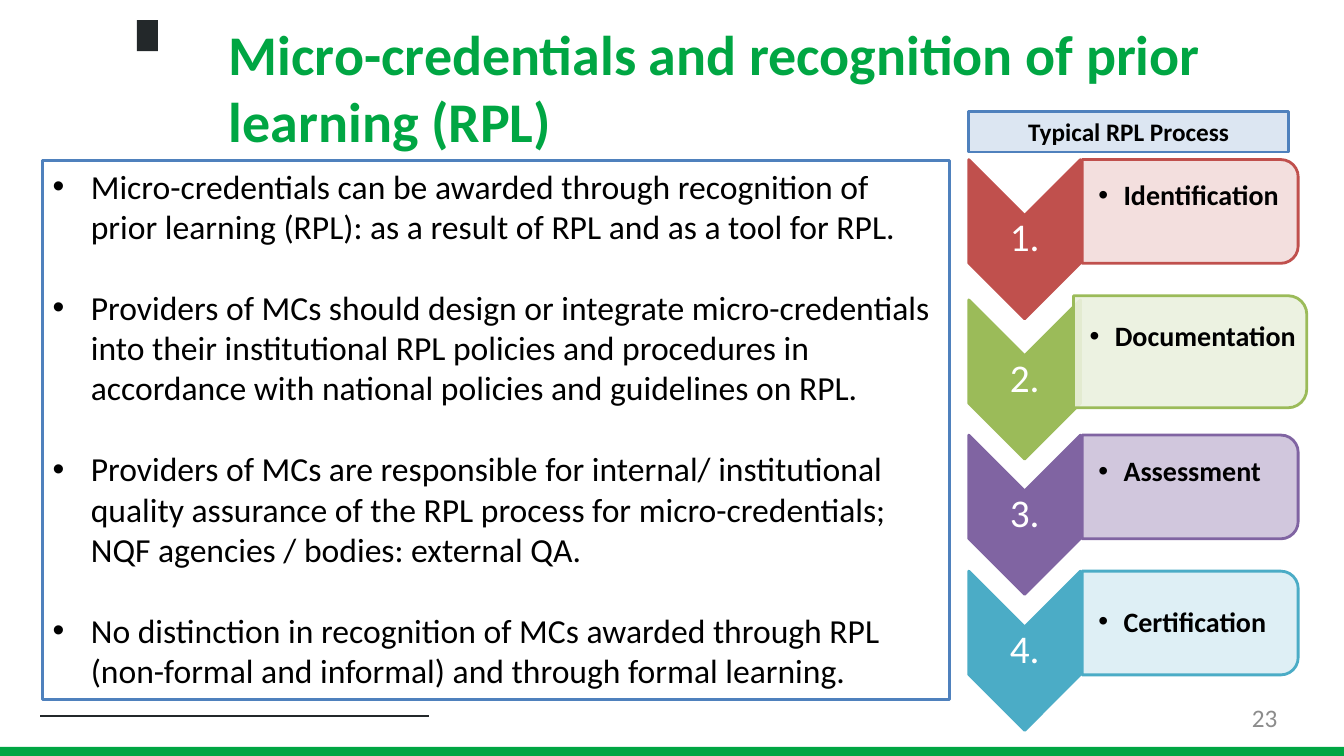
from lxml.etree import SubElement
from pptx import Presentation
from pptx.dml.color import RGBColor
from pptx.enum.shapes import MSO_CONNECTOR, MSO_SHAPE
from pptx.enum.text import MSO_ANCHOR, MSO_AUTO_SIZE, PP_ALIGN
from pptx.oxml.ns import qn
from pptx.util import Inches, Pt

COLS, ROWS = 32, 18
WIDTH, HEIGHT = Inches(13.33), Inches(7.5)
UNIT = HEIGHT / ROWS
FONT = "Calibri"
C = {
    "green": "00A643", "ink": "23282A", "black": "000000", "white": "FFFFFF",
    "grey": "8C8C8C", "blue": "4F81BD", "pale_blue": "DCE6F2",
    "red": "C0504D", "pale_red": "F2DCDB", "olive": "9BBB59", "pale_olive": "EBF1DE",
    "purple": "8064A2", "pale_purple": "CCC1DA", "aqua": "4BACC6", "pale_aqua": "DBEEF4",
}
TITLE = "Micro-credentials and recognition of prior learning (RPL)"
POINTS = [
    "Micro-credentials can be awarded through recognition of prior learning (RPL): "
    "as a result of RPL and as a tool for RPL.",
    "Providers of MCs should design or integrate micro-credentials into their institutional "
    "RPL policies and procedures in accordance with national policies and guidelines on RPL.",
    "Providers of MCs are responsible for internal/ institutional quality assurance of the "
    "RPL process for micro-credentials; NQF agencies / bodies: external QA.",
    "No distinction in recognition of MCs awarded through RPL (non-formal and informal) "
    "and through formal learning.",
]
STEPS = [
    ("Identification", "red", 0, 1, 0.3),
    ("Documentation", "olive", 3.34, 1.08, 0.3),
    ("Assessment", "purple", 6.56, 1, 0.3),
    ("Certification", "aqua", 9.8, 1, 0.01),
]


def grid(*values):
    return [round(v * UNIT) for v in values]


def rgb(name):
    return RGBColor.from_string(C[name])


def place(sp, box):
    sp.left, sp.top, sp.width, sp.height = grid(*box)


def paint(sp, fill, line=None, alpha=None):
    sp.fill.solid()
    sp.fill.fore_color.rgb = rgb(fill)
    if alpha:
        color = sp.fill._xPr.find(qn("a:solidFill"))[0]
        SubElement(color, qn("a:alpha"), val=str(alpha * 1000))
    if line:
        sp.line.color.rgb = rgb(line)
        sp.line.width = Pt(2)
    else:
        sp.line.fill.background()


def add_box(slide, kind, box, fill, line=None, alpha=None):
    sp = slide.shapes.add_shape(kind, *grid(*box))
    sp.shadow.inherit = False
    paint(sp, fill, line, alpha)
    return sp


def add_turned(slide, kind, box, fill, line, alpha=None):
    x, y, w, h = box
    sp = add_box(slide, kind, (x + (w - h) / 2, y + (h - w) / 2, h, w), fill, line, alpha)
    sp.rotation = 90
    return sp


def write(sp, *lines, size, color="black", bold=False, align=PP_ALIGN.LEFT,
          anchor=MSO_ANCHOR.TOP, insets=(0.1, 0.05, 0.1, 0.05), indent=0, gap=0, spacing=1):
    tf = sp.text_frame
    tf.word_wrap = True
    tf.auto_size = MSO_AUTO_SIZE.NONE
    tf.vertical_anchor = anchor
    tf.margin_left, tf.margin_top, tf.margin_right, tf.margin_bottom = map(Inches, insets)
    for i, text in enumerate(lines):
        p = tf.add_paragraph() if i else tf.paragraphs[0]
        p.alignment = align
        p.line_spacing = spacing
        p.space_before = Pt(gap if i else 0)
        if indent:
            pPr = p._p.get_or_add_pPr()
            pPr.set("marL", str(Inches(indent)))
            pPr.set("indent", str(-Inches(indent)))
            SubElement(pPr, qn("a:buFont"), typeface="Arial")
            SubElement(pPr, qn("a:buChar"), char="•")
        r = p.add_run()
        r.text = text
        r.font.name, r.font.size, r.font.bold = FONT, Pt(size), bold
        r.font.color.rgb = rgb(color)


def add_text(slide, box, text, **style):
    write(slide.shapes.add_textbox(*grid(*box)), text, **style)


def add_frame(slide, box):
    x, y, w, h = box
    add_box(slide, MSO_SHAPE.RECTANGLE, (x, y + h - 0.22, w, 0.22), "green")
    add_box(slide, MSO_SHAPE.RECTANGLE, (x + 3.26, y + 0.48, 0.5, 0.74), "ink")
    rule = slide.shapes.add_connector(
        MSO_CONNECTOR.STRAIGHT, *grid(x + 0.96, y + h - 0.96, x + 10.2, y + h - 0.96))
    rule.line.color.rgb = rgb("ink")
    rule.line.width = Pt(1.5)
    SubElement(rule._element.spPr, qn("a:effectLst"))
    add_text(slide, (x + 23.04, y + h - 1.27, 7.37, 0.91), "23", size=18, color="grey",
             align=PP_ALIGN.RIGHT, insets=(0, 0, 0, 0))


def add_title(slide, box):
    title = slide.shapes.title
    place(title, box)
    write(title, TITLE, size=40, color="green", bold=True)


def add_points(slide, box):
    body = slide.placeholders[1]
    place(body, box)
    paint(body, "white", "blue")
    write(body, *POINTS, size=24, indent=0.38, gap=29)


def add_step(slide, box, number, label, color, scale, bottom):
    x, y, w, h = box
    arrow = (x, y, 2.66, h)
    add_turned(slide, MSO_SHAPE.CHEVRON, arrow, color, color)
    add_text(slide, arrow, f"{number}.", size=28, color="white", align=PP_ALIGN.CENTER,
             anchor=MSO_ANCHOR.MIDDLE, insets=(0.02, 0.02, 0.02, 0.02), spacing=0.9)
    card_w, card_h = 5.14 * scale, 2.47 * scale
    card_x, card_y = x + w - (5.14 + card_w) / 2, y + (2.47 - card_h) / 2
    add_turned(slide, MSO_SHAPE.ROUND_2_SAME_RECTANGLE, (card_x, card_y, card_w, card_h),
               f"pale_{color}", color, alpha=90)
    add_text(slide, (card_x, card_y + 0.12, card_w - 0.12, card_h - 0.24), label, size=20,
             bold=True, anchor=MSO_ANCHOR.MIDDLE, insets=(0.16, 0.01, 0.01, bottom),
             indent=0.25, spacing=0.9)


def add_process(slide, box):
    x, y, w, h = box
    for number, (label, color, top, scale, bottom) in enumerate(STEPS, 1):
        add_step(slide, (x, y + 1.14 + top, w, 3.79), number, label, color, scale, bottom)
    heading = add_box(slide, MSO_SHAPE.RECTANGLE, (x, y, 7.61, 0.96), "pale_blue", "blue")
    write(heading, "Typical RPL Process", size=18, bold=True, align=PP_ALIGN.CENTER)


def main():
    prs = Presentation()
    prs.slide_width, prs.slide_height = WIDTH, HEIGHT
    slide = prs.slides.add_slide(prs.slide_layouts[1])
    add_frame(slide, (0, 0, COLS, ROWS))
    add_title(slide, (5.21, 0.34, 25, 3.48))
    add_points(slide, (1.01, 3.82, 21.6, 12.84))
    add_process(slide, (23.06, 2.66, 7.84, 14.73))
    prs.save("out.pptx")


if __name__ == "__main__":
    main()
